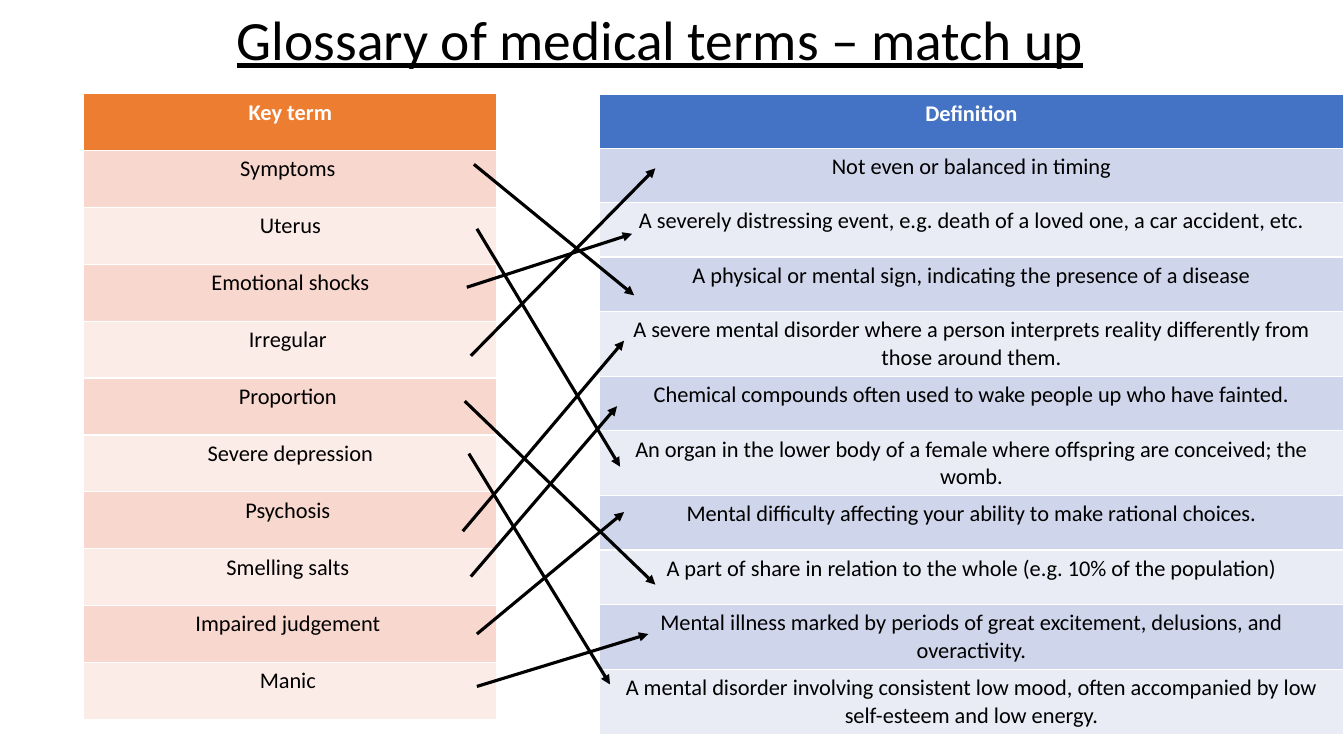
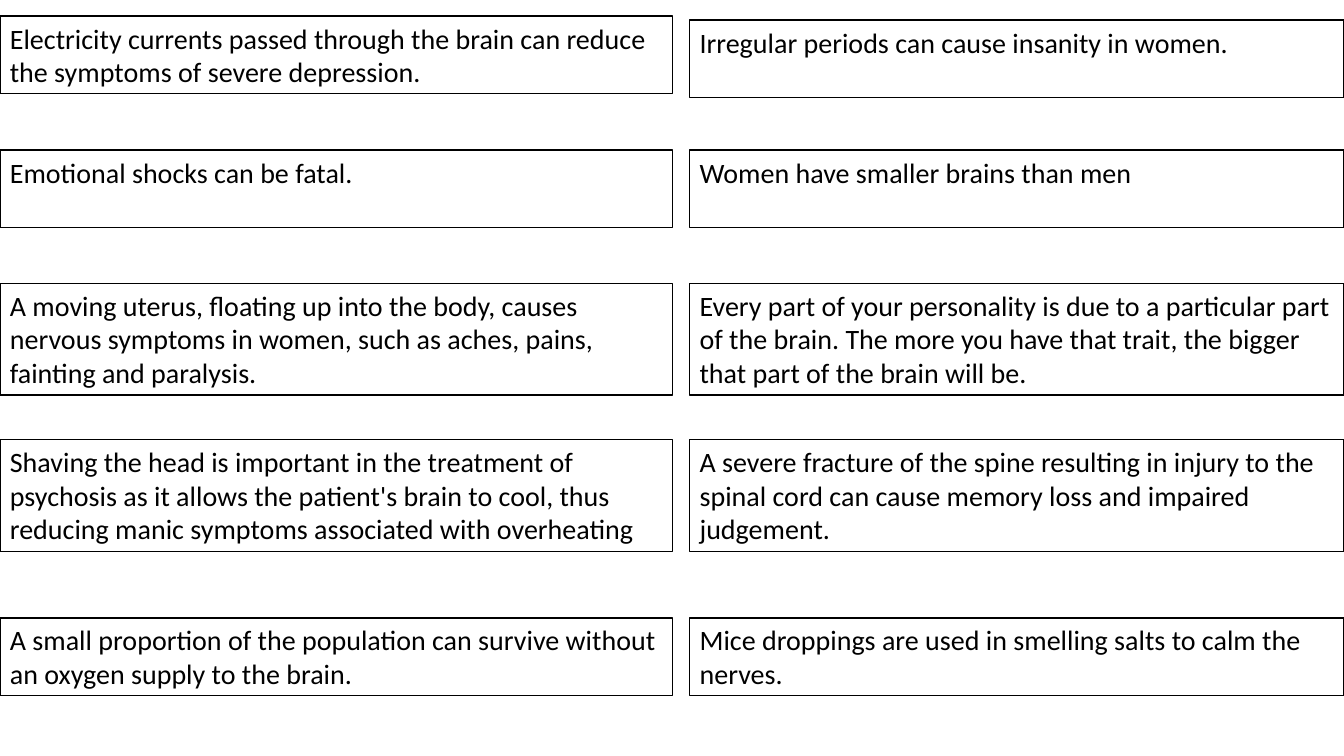
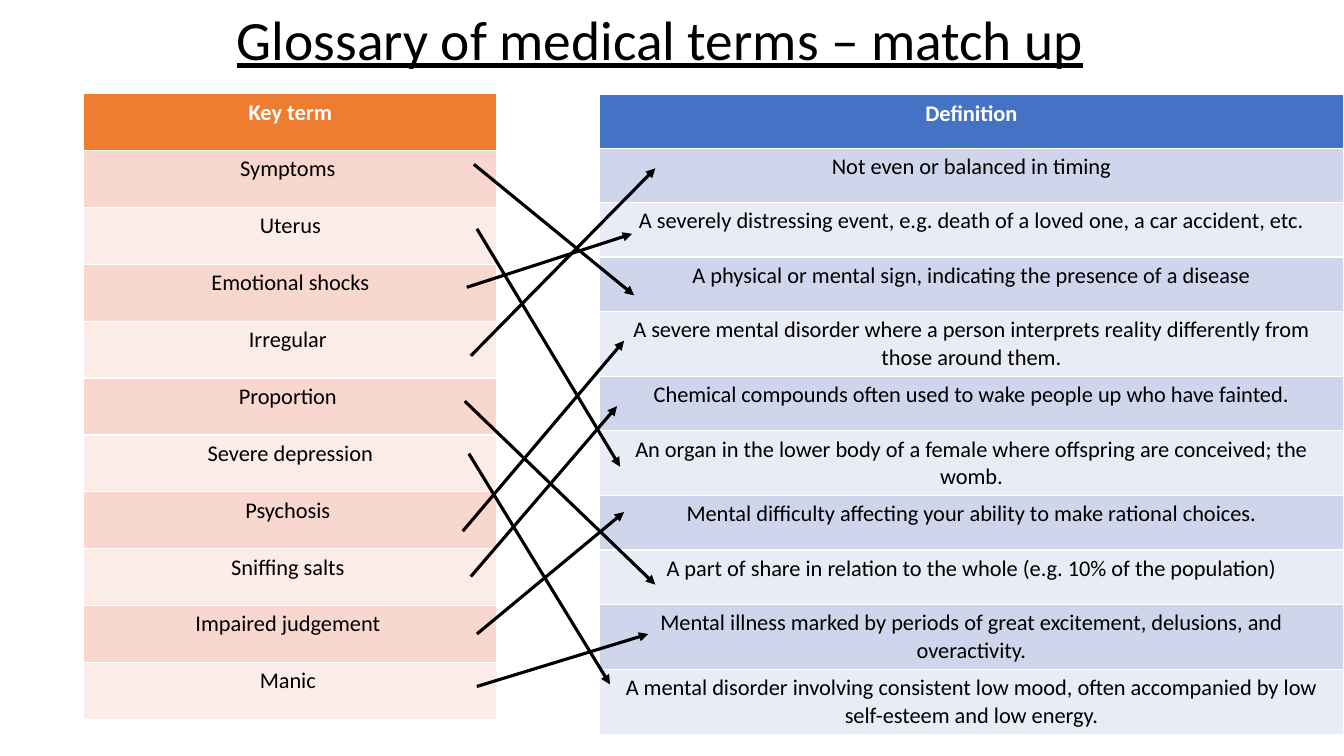
import pptx
import pptx.dml.color
import pptx.enum.shapes
import pptx.enum.text
import pptx.oxml
import pptx.oxml.ns
import pptx.util

Inches = pptx.util.Inches
Pt = pptx.util.Pt
RGB = pptx.dml.color.RGBColor.from_string
ALIGN = pptx.enum.text.PP_ALIGN


class Theme:
    font = "Calibri"
    black = RGB("000000")
    white = RGB("FFFFFF")
    # Header, odd row and even row of each table
    warm = (RGB("ED7D31"), RGB("F8D7CE"), RGB("FCECE8"))
    cool = (RGB("4472C4"), RGB("CFD5EA"), RGB("E9EBF5"))
    title = Pt(39.6)
    cell = Pt(16)
    note = Pt(20)
    edge = Pt(1)
    arrow = Pt(2.25)


def style(para, size, color, align=ALIGN.LEFT):
    para.alignment = align
    para.font.name = Theme.font
    para.font.size = size
    para.font.color.rgb = color


def fill_table(slide, box, lines, tones, heights):
    left, top, width = box
    frame = slide.shapes.add_table(
        len(lines), 1, Inches(left), Inches(top), Inches(width), Inches(sum(heights)))
    table = frame.table
    for i, (line, height) in enumerate(zip(lines, heights)):
        table.rows[i].height = Inches(height)
        cell = table.cell(i, 0)
        cell.text = line
        cell.fill.solid()
        cell.fill.fore_color.rgb = tones[0] if i == 0 else tones[2 - i % 2]
        para = cell.text_frame.paragraphs[0]
        style(para, Theme.cell, Theme.white if i == 0 else Theme.black, ALIGN.CENTER)
        para.font.bold = i == 0


deck = pptx.Presentation()
deck.slide_width = Inches(13.33)
deck.slide_height = Inches(7.5)
TITLED, BLANK = deck.slide_layouts[5], deck.slide_layouts[6]

# Glossary content; the salts term differs between the two match-up slides
TERMS = [
    "Key term", "Symptoms ", "Uterus", "Emotional shocks", "Irregular ", "Proportion ",
    "Severe depression", "Psychosis ", "{} salts ", "Impaired judgement ", "Manic ",
]
MEANINGS = [
    "Definition",
    "Not even or balanced in timing",
    "A severely distressing event, e.g. death of a loved one, a car accident, etc.",
    "A physical or mental sign, indicating the presence of a disease",
    "A severe mental disorder where a person interprets reality differently from "
    "those around them.",
    "Chemical compounds often used to wake people up who have fainted.",
    "An organ in the lower body of a female where offspring are conceived; the womb.",
    "Mental difficulty affecting your ability to make rational choices.",
    "A part of share in relation to the whole (e.g. 10% of the population)",
    "Mental illness marked by periods of great excitement, delusions, and overactivity.",
    "A mental disorder involving consistent low mood, often accompanied by low "
    "self-esteem and low energy.",
]
TALL_ROWS = (4, 6, 9, 10)
TERM_ROWS = [6.21 / len(TERMS)] * len(TERMS)
MEANING_ROWS = [0.53] + [0.61 if i in TALL_ROWS else 0.54 for i in range(1, len(MEANINGS))]

# Arrow ends in term order: from x, y to x, y
ARROWS = [
    (4.7, 1.63, 6.29, 2.93), (4.73, 2.27, 6.15, 4.63), (4.63, 2.85, 6.27, 2.32),
    (4.67, 3.53, 6.5, 1.67), (4.61, 3.98, 6.5, 5.8), (4.65, 4.5, 6.05, 6.79),
    (4.59, 5.27, 6.19, 3.38), (4.67, 5.72, 6.12, 4.03), (4.73, 6.29, 6.19, 5.08),
    (4.73, 6.81, 6.43, 6.29),
]

# Statement cards: width and left of each column, then each row's tops, height and texts
COLUMNS = [(0, 6.67), (6.84, 6.49)]
CARDS = [
    ((0.16, 0.2), 0.77,
     ("Electricity currents passed through the brain can reduce the symptoms of "
      "severe depression.",
      "Irregular periods can cause insanity in women.")),
    ((1.49, 1.49), 0.77,
     ("Emotional shocks can be fatal.",
      "Women have smaller brains than men")),
    ((2.81, 2.81), 1.11,
     ("A moving uterus, floating up into the body, causes nervous symptoms in women, "
      "such as aches, pains, fainting and paralysis.",
      "Every part of your personality is due to a particular part of the brain. The "
      "more you have that trait, the bigger that part of the brain will be.")),
    ((4.36, 4.36), 1.11,
     ("Shaving the head is important in the treatment of psychosis as it allows the "
      "patient's brain to cool, thus reducing manic symptoms associated with overheating",
      "A severe fracture of the spine resulting in injury to the spinal cord can cause "
      "memory loss and impaired judgement.")),
    ((6.13, 6.13), 0.77,
     ("A small proportion of the population can survive without an oxygen supply to "
      "the brain.",
      "Mice droppings are used in smelling salts to calm the nerves.")),
]

for salts in ("Smelling", None, "Sniffing"):
    # Statement slide
    if salts is None:
        slide = deck.slides.add_slide(BLANK)
        for tops, height, texts in CARDS:
            for (left, width), top, text in zip(COLUMNS, tops, texts):
                card = slide.shapes.add_textbox(
                    Inches(left), Inches(top), Inches(width), Inches(height))
                card.fill.solid()
                card.fill.fore_color.rgb = Theme.white
                card.line.color.rgb = Theme.black
                card.line.width = Theme.edge
                card.text_frame.word_wrap = True
                card.text_frame.text = text
                style(card.text_frame.paragraphs[0], Theme.note, Theme.black)
        continue

    # Match-up slide: title
    slide = deck.slides.add_slide(TITLED)
    title = slide.shapes.title
    title.left, title.top = Inches(2.25), Inches(0.09)
    title.width, title.height = Inches(10.42), Inches(0.66)
    frame = title.text_frame
    frame.text = "Glossary of medical terms – match up"
    frame.auto_size = pptx.enum.text.MSO_AUTO_SIZE.NONE
    frame.vertical_anchor = pptx.enum.text.MSO_ANCHOR.MIDDLE
    para = frame.paragraphs[0]
    style(para, Theme.title, Theme.black)
    para.font.underline = True
    para.line_spacing = 0.9

    # Tables
    terms = [term.format(salts) for term in TERMS]
    fill_table(slide, (5.94, 0.94, 7.39), MEANINGS, Theme.cool, MEANING_ROWS)
    fill_table(slide, (0.83, 0.93, 4.1), terms, Theme.warm, TERM_ROWS)

    # Arrows from terms to meanings
    for ends in ARROWS:
        arrow = slide.shapes.add_connector(
            pptx.enum.shapes.MSO_CONNECTOR.STRAIGHT, *map(Inches, ends))
        arrow.line.color.rgb = Theme.black
        arrow.line.width = Theme.arrow
        props = arrow.element.spPr
        head = pptx.oxml.parse_xml(
            f'<a:tailEnd {pptx.oxml.ns.nsdecls("a")} type="triangle"/>')
        props.find(pptx.oxml.ns.qn("a:ln")).append(head)
        props.append(pptx.oxml.parse_xml(
            f'<a:effectLst {pptx.oxml.ns.nsdecls("a")}/>'))

deck.save("out.pptx")
